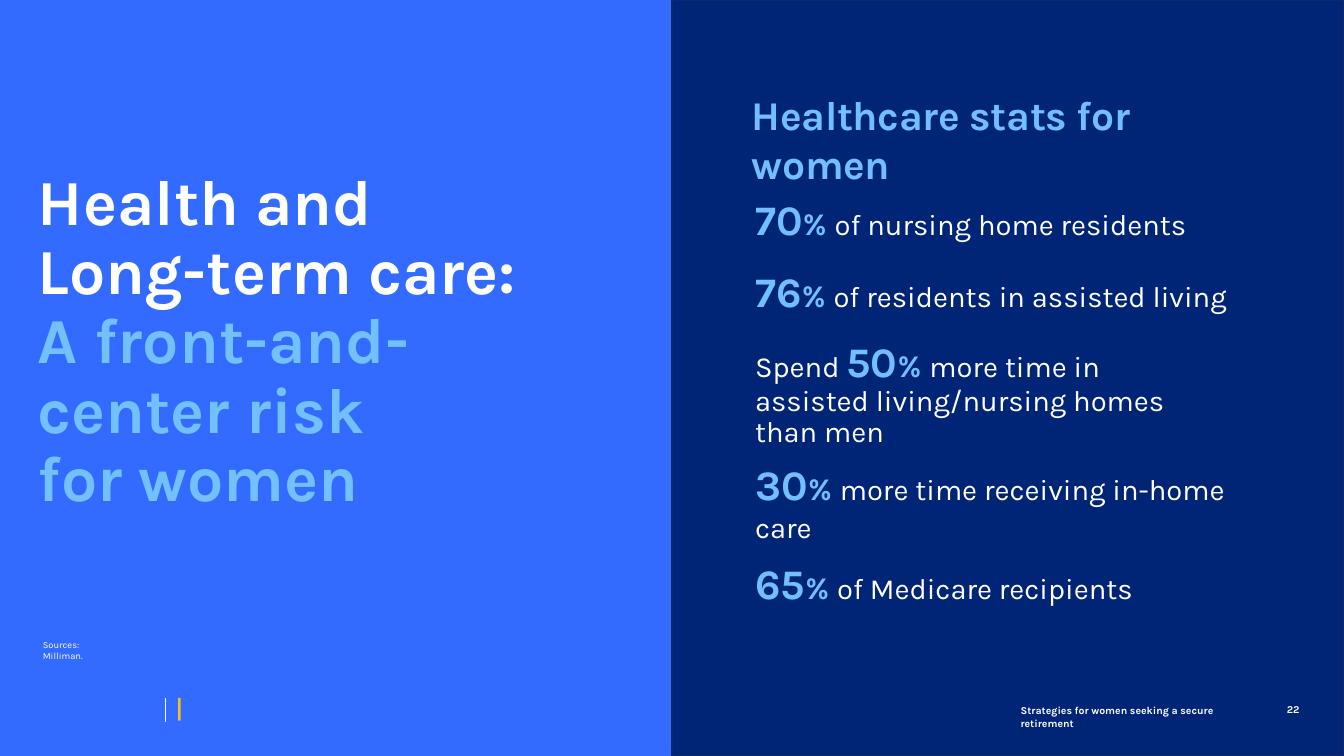
from pptx import Presentation
from pptx.dml.color import RGBColor
from pptx.enum.shapes import MSO_CONNECTOR, MSO_SHAPE
from pptx.enum.text import MSO_ANCHOR, MSO_AUTO_SIZE, PP_ALIGN
from pptx.oxml.ns import qn
from pptx.util import Inches, Pt
from lxml import etree

RECTANGLE = MSO_SHAPE.RECTANGLE
STRAIGHT = MSO_CONNECTOR.STRAIGHT
TOP = MSO_ANCHOR.TOP
LEFT = PP_ALIGN.LEFT
NO_AUTOSIZE = MSO_AUTO_SIZE.NONE

COLORS = {
    "blue": "336AFF",
    "navy": "002577",
    "edge": "0F286C",
    "sky": "73BEFF",
    "heading sky": "73C0FF",
    "gold": "F8BE14",
    "white": "FFFFFF",
}
FONT = "Karla"
COLUMNS, ROWS = 16, 9
NO_TABLE_STYLE = "{2D5ABB26-0587-4C30-8999-92F81FD0307C}"

deck = Presentation()
deck.slide_width = Inches(COLUMNS)
deck.slide_height = Inches(ROWS)
page = deck.slides.add_slide(deck.slide_layouts[5])


def grid(*cells):
    return [Inches(cell) for cell in cells]


def write(para, pieces):
    para.alignment = LEFT
    for text, size, color, bold in pieces:
        span = para.add_run()
        span.text = text
        span.font.name = FONT
        span.font.size = Pt(size)
        span.font.bold = bold
        span.font.color.rgb = RGBColor.from_string(COLORS[color])


half = COLUMNS / 2
blocks = [
    ((0, 0, half, ROWS), "blue", None),
    ((half, 0, half, ROWS), "navy", "edge"),
    ((2.12, 8.31, 0.03, 0.27), "gold", None),
]
for place, fill, edge in blocks:
    block = page.shapes.add_shape(RECTANGLE, *grid(*place))
    block.shadow.inherit = False
    block.fill.solid()
    block.fill.fore_color.rgb = RGBColor.from_string(COLORS[fill])
    if edge:
        block.line.color.rgb = RGBColor.from_string(COLORS[edge])
        block.line.width = Pt(1)
    else:
        block.line.fill.background()

divider = page.shapes.add_connector(STRAIGHT, *grid(1.97, 8.31, 1.97, 8.59))
divider.line.color.rgb = RGBColor.from_string(COLORS["white"])
divider.line.width = Pt(0.5)
etree.SubElement(divider._element.spPr, qn("a:effectLst"))

title = page.shapes.title
title.left, title.top, title.width, title.height = grid(8.94, 1.06, 6.12, 0.61)
page.shapes._spTree.append(title._element)

heading = [
    [("Health and Long-term care: ", 55, "white", True),
     ("A front-and- center risk", 55, "heading sky", True)],
    [("for women", 55, "heading sky", True)],
]
texts = [
    (title, 0.01, [[("Healthcare stats for women", 35, "sky", True)]]),
    ((0.44, 1.89, 5.75, 4.24), 0.12, heading),
    ((0.5, 7.6, 0.91, 0.16), 0.01, [[("Sources: Milliman.", 8, "white", False)]]),
    ((12.14, 8.36, 2.96, 0.19), 0.02,
     [[("Strategies for women seeking a secure retirement", 9, "white", True)]]),
    ((15.31, 8.35, 0.24, 0.19), 0.02, [[("22", 9, "white", True)]]),
]
for place, inset, paragraphs in texts:
    box = title if place is title else page.shapes.add_textbox(*grid(*place))
    frame = box.text_frame
    frame.word_wrap = True
    frame.auto_size = NO_AUTOSIZE
    frame.vertical_anchor = TOP
    frame.margin_left, frame.margin_top, frame.margin_right, frame.margin_bottom = grid(0.01, inset, 0, 0)
    for index, pieces in enumerate(paragraphs):
        para = frame.add_paragraph() if index else frame.paragraphs[0]
        write(para, pieces)
        if paragraphs is heading:
            para.line_spacing = Pt(58.5 if index else 59.4)

for span in title.text_frame.paragraphs[0].runs:
    span._r.get_or_add_rPr().set("spc", "-35")

stats = [
    (0.76, 0.04, 0, "", "70", "of nursing home residents"),
    (0.83, 0.13, 0, "", "76", "of residents in assisted living"),
    (1.22, 0.16, 0.9, "Spend ", "50", "more time in assisted living/nursing homes than men"),
    (0.93, 0.16, 0, "", "30", "more time receiving in-home care"),
    (0.82, 0.19, 0, "", "65", "of Medicare recipients"),
]
table_height = sum(stat[0] for stat in stats)
table = page.shapes.add_table(len(stats), 1, *grid(8.96, 2.31, 6.28, table_height)).table
table.first_row = False
table.horz_banding = False
table._tbl.tblPr.find(qn("a:tableStyleId")).text = NO_TABLE_STYLE

for index, (height, inset, right, lead, number, label) in enumerate(stats):
    table.rows[index].height = Inches(height)
    cell = table.cell(index, 0)
    cell.fill.solid()
    cell.fill.fore_color.rgb = RGBColor.from_string(COLORS["navy"])
    cell.vertical_anchor = TOP
    cell.margin_left, cell.margin_top, cell.margin_right, cell.margin_bottom = grid(0.03, inset, right, 0)
    para = cell.text_frame.paragraphs[0]
    pieces = [
        (number, 36, "sky", True),
        ("% ", 27, "sky", True),
        (label, 25, "white", False),
    ]
    if lead:
        pieces.insert(0, (lead, 25, "white", False))
        para.line_spacing = 0.92
    write(para, pieces)

deck.save("out.pptx")
